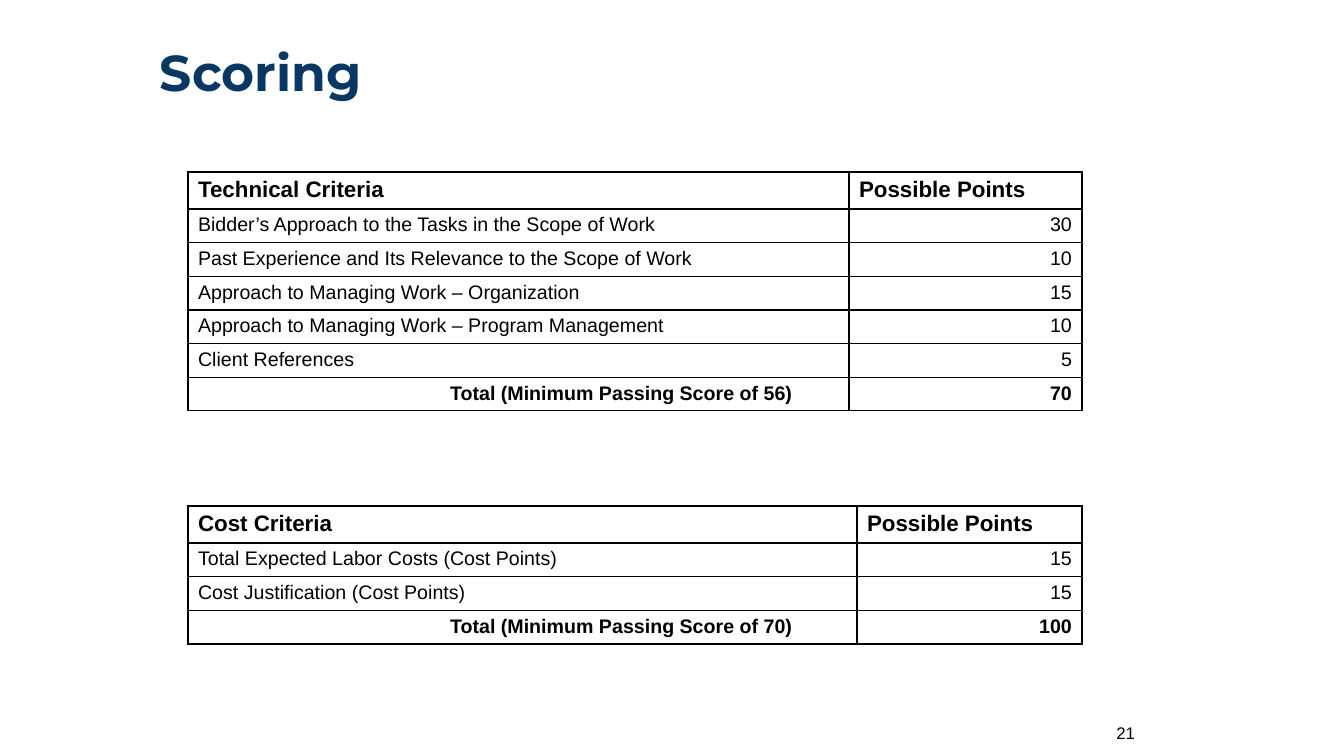
from dataclasses import dataclass

from lxml.etree import SubElement
from pptx import Presentation
from pptx.dml.color import RGBColor
from pptx.enum.text import MSO_ANCHOR as ANCHOR, PP_ALIGN as ALIGN
from pptx.oxml.ns import qn
from pptx.util import Pt

EMU_PER_INCH = 914400
PX_PER_INCH = 100.8


@dataclass(frozen=True)
class Theme:
    navy: str = "083763"
    black: str = "000000"
    white: str = "FFFFFF"
    heading_font: str = "Montserrat"
    body_font: str = "Arial"
    title_size: int = 36
    header_size: int = 16
    body_size: int = 14
    page_size: int = 12
    border_width: int = 1


THEME = Theme()

HEADER_HEIGHT = 35
ROW_HEIGHT = 32
TOTAL_INDENT = 252

TECHNICAL = [
    ("Technical Criteria", "Possible Points"),
    ("Bidder’s Approach to the Tasks in the Scope of Work", "30"),
    ("Past Experience and Its Relevance to the Scope of Work", "10"),
    ("Approach to Managing Work – Organization", "15"),
    ("Approach to Managing Work – Program Management", "10"),
    ("Client References", "5"),
    ("Total (Minimum Passing Score of 56)", "70"),
]
COST = [
    ("Cost Criteria", "Possible Points"),
    ("Total Expected Labor Costs (Cost Points)", "15"),
    ("Cost Justification (Cost Points)", "15"),
    ("Total (Minimum Passing Score of 70)", "100"),
]


def px(n):
    return round(n * EMU_PER_INCH / PX_PER_INCH)


def write(tf, text, size, font=THEME.body_font, color=THEME.black, bold=False,
          align=ALIGN.LEFT, spacing=1.0, indent=0):
    tf.word_wrap = True
    p = tf.paragraphs[0]
    p.alignment = align
    p.line_spacing = spacing
    if indent:
        p._p.get_or_add_pPr().set("marL", str(px(indent)))
    r = p.add_run()
    r.text = text
    r.font.size = Pt(size)
    r.font.name = font
    r.font.bold = bold
    r.font.color.rgb = RGBColor.from_string(color)


def add_label(slide, box, text, size, **style):
    tf = slide.shapes.add_textbox(*map(px, box)).text_frame
    tf.vertical_anchor = ANCHOR.MIDDLE
    write(tf, text, size, **style)


def frame_cell(cell):
    """Give the cell a white fill and a thin line on all four sides."""
    cell.fill.solid()
    cell.fill.fore_color.rgb = RGBColor.from_string(THEME.white)
    tcPr = cell._tc.get_or_add_tcPr()
    for i, side in enumerate(("a:lnL", "a:lnR", "a:lnT", "a:lnB")):
        ln = SubElement(tcPr, qn(side), w=str(Pt(THEME.border_width)))
        tcPr.insert(i, ln)
        fill = SubElement(ln, qn("a:solidFill"))
        SubElement(fill, qn("a:srgbClr"), val=THEME.black)


def add_score_table(slide, left, top, widths, rows):
    """Draw a header row, the criteria and a bold, indented total."""
    heights = [HEADER_HEIGHT] + [ROW_HEIGHT] * (len(rows) - 1)
    box = (left, top, sum(widths), sum(heights))
    table = slide.shapes.add_table(len(rows), len(widths), *map(px, box)).table
    table.first_row = table.horz_banding = False
    for column, width in zip(table.columns, widths):
        column.width = px(width)
    for i, (values, height) in enumerate(zip(rows, heights)):
        table.rows[i].height = px(height)
        header, total = i == 0, i == len(rows) - 1
        for j, value in enumerate(values):
            cell = table.cell(i, j)
            frame_cell(cell)
            write(cell.text_frame, value,
                  THEME.header_size if header else THEME.body_size,
                  bold=header or total,
                  align=ALIGN.RIGHT if j and not header else ALIGN.LEFT,
                  indent=TOTAL_INDENT if total and j == 0 else 0)


def add_scoring_slide(prs):
    slide = prs.slides.add_slide(prs.slide_layouts[6])
    add_label(slide, (150, 18, 1098, 115), "Scoring", THEME.title_size,
              font=THEME.heading_font, color=THEME.navy, bold=True, spacing=0.9)
    add_score_table(slide, 188, 172, (661, 233), TECHNICAL)
    add_score_table(slide, 188, 506, (669, 225), COST)
    add_label(slide, (950, 713, 195, 40), "21", THEME.page_size, align=ALIGN.RIGHT)


def main():
    prs = Presentation()
    prs.slide_width, prs.slide_height = px(1344), px(756)
    add_scoring_slide(prs)
    prs.save("out.pptx")


if __name__ == "__main__":
    main()
